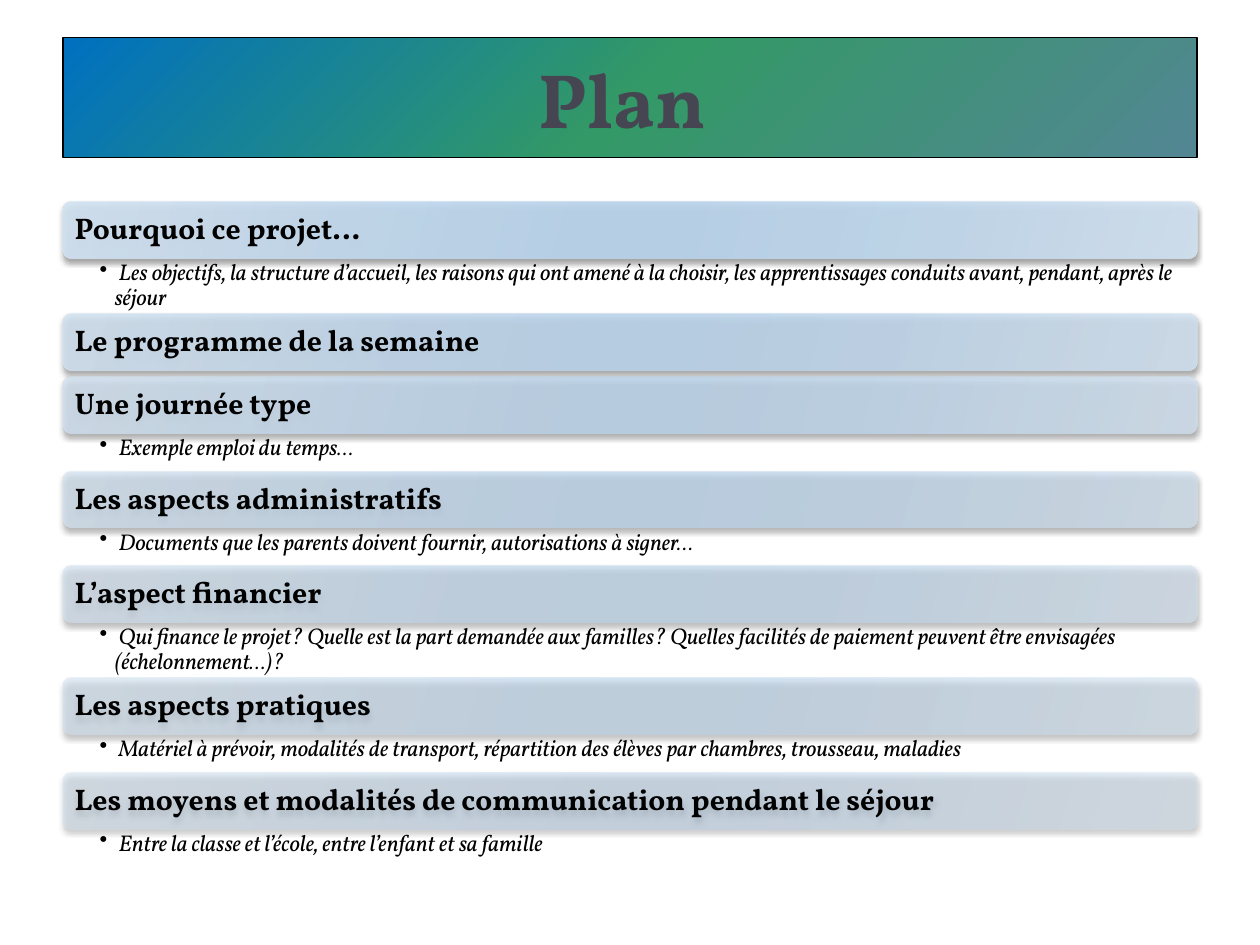
import dataclasses

import lxml.etree
import pptx
import pptx.dml.color
import pptx.enum.shapes
import pptx.enum.text
import pptx.oxml.ns
import pptx.util

Inches = pptx.util.Inches
Pt = pptx.util.Pt
qn = pptx.oxml.ns.qn


@dataclasses.dataclass(frozen=True)
class Theme:
    """Colours, font and type sizes of the slide."""
    font: str = "Vollkorn"
    title_size: int = 44
    heading_size: int = 17
    note_size: int = 13
    title_color: str = "464653"
    text_color: str = "000000"
    title_stops: tuple = ((0, "0070C0"), (50, "339966"), (100, "528693"))
    bar_stops: tuple = ((0, "D3E3F2"), (30, "C0D8EE"), (45, "BAD4EC"),
                        (55, "BAD4EC"), (73, "C0D8EE"), (100, "D3E3F2"))
    first_opacity: int = 90
    last_opacity: int = 50


THEME = Theme()
LEFT, WIDTH = Inches(0.5), Inches(9)
BAR_HEIGHT, BAR_GAP = Inches(0.45), Inches(0.05)
NOTE_HEIGHTS = {1: Inches(0.3), 2: Inches(0.44)}

SECTIONS = (
    ("Pourquoi ce projet…",
     " Les objectifs, la structure d’accueil, les raisons qui ont amené à la choisir, "
     "les apprentissages conduits avant, pendant, après le séjour", 2),
    ("Le programme de la semaine", None, 0),
    ("Une journée type", " Exemple emploi du temps…", 1),
    ("Les aspects administratifs",
     " Documents que les parents doivent fournir, autorisations à signer…", 1),
    ("L’aspect financier",
     " Qui finance le projet? Quelle est la part demandée aux familles? "
     "Quelles facilités de paiement peuvent être envisagées (échelonnement…)?", 2),
    ("Les aspects pratiques",
     " Matériel à prévoir, modalités de transport, répartition des élèves par chambres, "
     "trousseau, maladies", 1),
    ("Les moyens et modalités de communication pendant le séjour",
     " Entre la classe et l’école, entre l’enfant et sa famille", 1),
)


def add_element(parent, tag, **attributes):
    """Append a DrawingML element to a parent and return it."""
    element = lxml.etree.SubElement(parent, qn(tag))
    for name, value in attributes.items():
        element.set(name, str(value))
    return element


def add_color(parent, color, opacity):
    """Append an RGB colour with an opacity in percent."""
    rgb = add_element(parent, "a:srgbClr", val=color)
    add_element(rgb, "a:alpha", val=round(opacity * 1000))


def set_gradient(shape, stops, angle, opacity=100):
    """Fill a shape with a linear gradient."""
    shape.fill.gradient()
    gradient = shape.element.spPr.find(qn("a:gradFill"))
    for child in list(gradient):
        gradient.remove(child)
    stop_list = add_element(gradient, "a:gsLst")
    for position, color in stops:
        stop = add_element(stop_list, "a:gs", pos=position * 1000)
        add_color(stop, color, opacity)
    add_element(gradient, "a:lin", ang=angle * 60000, scaled=0)


def set_shadow(shape):
    """Give a shape a soft shadow that falls straight down."""
    shape.shadow.inherit = False
    effects = shape.element.spPr.find(qn("a:effectLst"))
    shadow = add_element(effects, "a:outerShdw", blurRad=Pt(3), dist=Pt(2),
                         dir=90 * 60000, rotWithShape=0)
    add_color(shadow, THEME.text_color, 40)


def set_frame(shape, margins, anchor):
    """Set the margins, wrapping and anchor of a text frame."""
    frame = shape.text_frame
    frame.word_wrap = True
    frame.vertical_anchor = anchor
    (frame.margin_left, frame.margin_top,
     frame.margin_right, frame.margin_bottom) = map(Inches, margins)
    return frame.paragraphs[0]


def add_run(paragraph, text, size, color, bold=False, italic=False):
    """Add one formatted run to a paragraph."""
    run = paragraph.add_run()
    run.text = text
    run.font.name = THEME.font
    run.font.size = Pt(size)
    run.font.bold = bold
    run.font.italic = italic
    run.font.color.rgb = pptx.dml.color.RGBColor.from_string(color)


def place_title(slide, text, left, top, width, height):
    """Place the title placeholder as a gradient banner."""
    title = slide.shapes.title
    title.left, title.top, title.width, title.height = left, top, width, height
    set_gradient(title, THEME.title_stops, 45)
    title.line.color.rgb = pptx.dml.color.RGBColor.from_string(THEME.text_color)
    title.line.width = Pt(0.75)
    paragraph = set_frame(title, (0.1, 0.05, 0.1, 0.05), pptx.enum.text.MSO_ANCHOR.MIDDLE)
    paragraph.alignment = pptx.enum.text.PP_ALIGN.CENTER
    add_run(paragraph, text, THEME.title_size, THEME.title_color, bold=True)


def place_heading(slide, text, opacity, left, top, width, height):
    """Place a rounded bar with a section heading."""
    bar = slide.shapes.add_shape(
        pptx.enum.shapes.MSO_SHAPE.ROUNDED_RECTANGLE, left, top, width, height)
    set_gradient(bar, THEME.bar_stops, 16, opacity)
    bar.line.fill.background()
    set_shadow(bar)
    paragraph = set_frame(bar, (0.07,) * 4, pptx.enum.text.MSO_ANCHOR.MIDDLE)
    paragraph.alignment = pptx.enum.text.PP_ALIGN.LEFT
    paragraph.line_spacing = 0.9
    add_run(paragraph, text, THEME.heading_size, THEME.text_color, bold=True)


def place_note(slide, text, left, top, width, height):
    """Place the bulleted note below a heading."""
    box = slide.shapes.add_textbox(left, top, width, height)
    paragraph = set_frame(box, (0.29, 0.02, 0.13, 0.02), pptx.enum.text.MSO_ANCHOR.TOP)
    paragraph.level = 1
    paragraph.line_spacing = 0.9
    properties = paragraph._p.get_or_add_pPr()
    properties.set("marL", str(Inches(0.12)))
    properties.set("indent", str(-Inches(0.12)))
    add_element(properties, "a:buChar", char="•")
    add_run(paragraph, text, THEME.note_size, THEME.text_color, italic=True)


def place_sections(slide, sections, left, top, width):
    """Stack the sections, with bars that fade from first to last."""
    fade = (THEME.first_opacity - THEME.last_opacity) / (len(sections) - 1)
    for index, (heading, note, lines) in enumerate(sections):
        opacity = THEME.first_opacity - index * fade
        place_heading(slide, heading, opacity, left, top, width, BAR_HEIGHT)
        top += BAR_HEIGHT
        if note:
            place_note(slide, note, left, top, width, NOTE_HEIGHTS[lines])
        top += NOTE_HEIGHTS.get(lines, BAR_GAP)


def main():
    """Build and save the plan slide."""
    presentation = pptx.Presentation()
    presentation.slide_width = Inches(10)
    presentation.slide_height = Inches(7.5)
    slide = presentation.slides.add_slide(presentation.slide_layouts[5])
    place_title(slide, "Plan ", LEFT, Inches(0.3), WIDTH, Inches(0.95))
    place_sections(slide, SECTIONS, LEFT, Inches(1.6), WIDTH)
    presentation.save("out.pptx")


if __name__ == "__main__":
    main()
